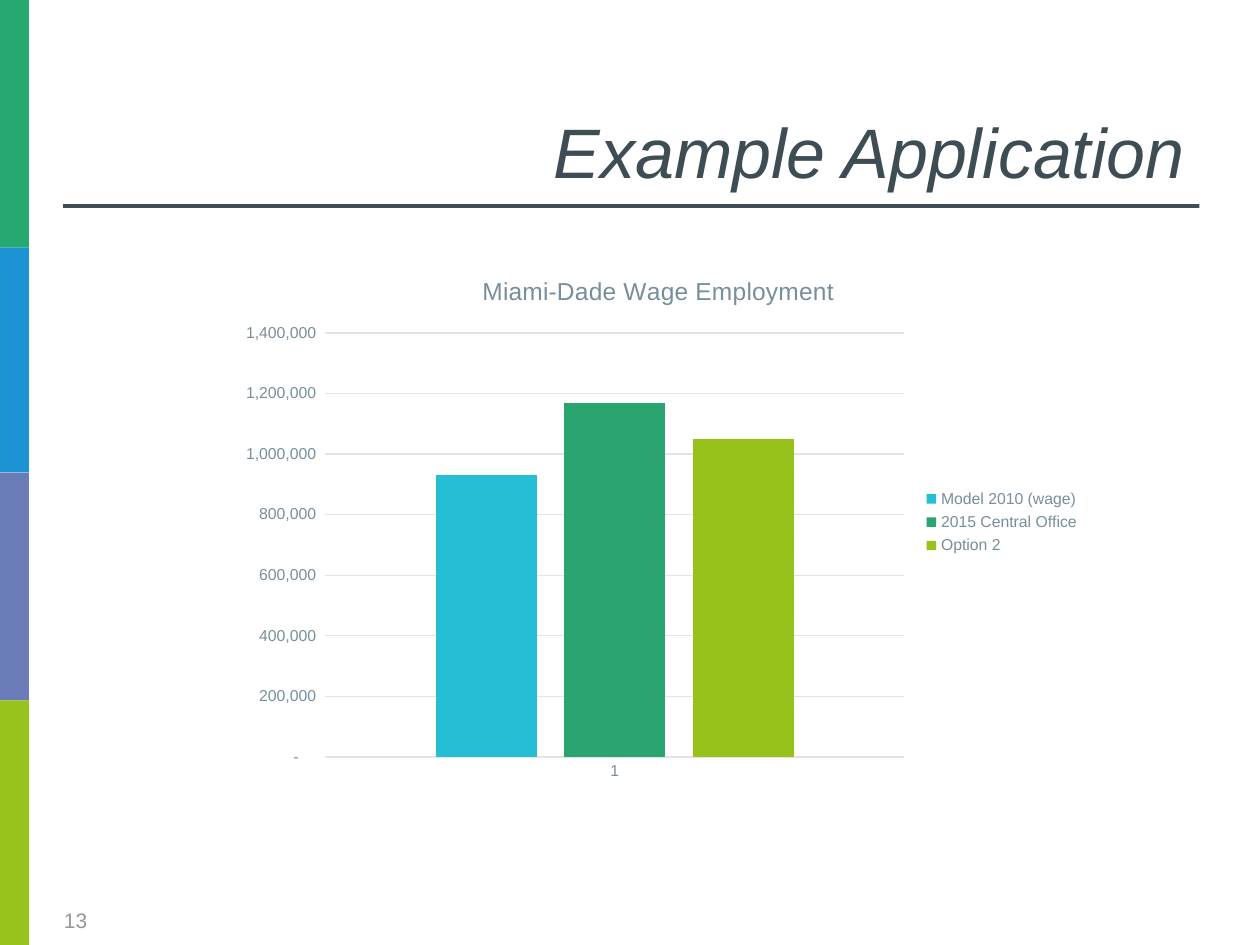
from dataclasses import dataclass
from itertools import pairwise
from typing import Any

from pptx import Presentation
from pptx.chart.data import CategoryChartData
from pptx.dml.color import RGBColor
from pptx.enum.chart import XL_CHART_TYPE as ChartType
from pptx.enum.chart import XL_LEGEND_POSITION as LegendPos
from pptx.enum.chart import XL_TICK_MARK as Tick
from pptx.enum.shapes import MSO_SHAPE as Shape
from pptx.enum.text import MSO_ANCHOR as Anchor
from pptx.enum.text import PP_ALIGN as Align
from pptx.util import Inches, Pt

WIDTH, HEIGHT = Inches(10), Inches(7.5)
FONT = "Arial"
MUTED, GRID = "788E9B", "E0E5E8"
NUMBER_FORMAT = '_(* #,##0_);_(* \\(#,##0\\);_(* "-"??_);_(@_)'


@dataclass(frozen=True)
class Box:
    """Percentages of the slide's width and height."""

    left: float
    top: float
    width: float
    height: float

    def emu(self) -> tuple[int, int, int, int]:
        return (
            round(WIDTH * self.left / 100),
            round(HEIGHT * self.top / 100),
            round(WIDTH * self.width / 100),
            round(HEIGHT * self.height / 100),
        )


@dataclass(frozen=True)
class Label:
    box: Box
    text: str
    size: int
    color: str
    align: Align
    anchor: Anchor
    italic: bool = False


@dataclass(frozen=True)
class Series:
    name: str
    value: int
    color: str


STRIPE_EDGES = (0, 26.2, 50, 74.13, 100)
STRIPE_COLORS = ("26A871", "1C93D2", "6A7CB8", "97C31C")
RULE = Box(5, 21.6, 90.2, 0.4)
CHART = Box(17.8, 26.8, 68.9, 56.93)
LABELS = (
    Label(Box(5, -0.13, 90, 21.2), "Example Application", 40, "3E4D54",
          Align.RIGHT, Anchor.BOTTOM, True),
    Label(Box(4.1, 94.67, 7.3, 5.33), "13", 12, "939799",
          Align.LEFT, Anchor.MIDDLE),
)
SERIES = (
    Series("Model 2010 (wage)", 930000, "25BED5"),
    Series("2015 Central Office", 1170000, "2BA570"),
    Series("Option 2", 1050000, "97C21C"),
)


def rgb(color: str) -> RGBColor:
    return RGBColor.from_string(color)


def set_font(font: Any, size: int, color: str, italic: bool = False) -> None:
    font.name, font.size = FONT, Pt(size)
    font.bold, font.italic = False, italic
    font.color.rgb = rgb(color)


def set_line(line: Any) -> None:
    line.color.rgb = rgb(GRID)
    line.width = Pt(0.75)


def add_bar(s: Any, box: Box, color: str) -> None:
    sp = s.shapes.add_shape(Shape.RECTANGLE, *box.emu())
    sp.shadow.inherit = False
    sp.fill.solid()
    sp.fill.fore_color.rgb = rgb(color)
    sp.line.fill.background()


def add_label(s: Any, label: Label) -> None:
    tf = s.shapes.add_textbox(*label.box.emu()).text_frame
    tf.word_wrap = True
    tf.vertical_anchor = label.anchor
    p = tf.paragraphs[0]
    p.alignment = label.align
    r = p.add_run()
    r.text = label.text
    set_font(r.font, label.size, label.color, label.italic)


def style_axis(axis: Any) -> None:
    axis.major_tick_mark = axis.minor_tick_mark = Tick.NONE
    set_font(axis.tick_labels.font, 9, MUTED)


def add_employment_chart(s: Any) -> None:
    data = CategoryChartData(number_format=NUMBER_FORMAT)
    data.categories = ["1"]
    for series in SERIES:
        data.add_series(series.name, [series.value])
    chart = s.shapes.add_chart(
        ChartType.COLUMN_CLUSTERED, *CHART.emu(), data).chart
    set_font(chart.font, 10, "3F4D55")

    chart.has_title = True
    r = chart.chart_title.text_frame.paragraphs[0].add_run()
    r.text = "Miami-Dade Wage Employment"
    set_font(r.font, 14, MUTED)
    chart.chart_title.include_in_layout = False

    chart.has_legend = True
    chart.legend.position = LegendPos.RIGHT
    chart.legend.include_in_layout = False
    set_font(chart.legend.font, 9, MUTED)

    for axis in (chart.category_axis, chart.value_axis):
        style_axis(axis)
    set_line(chart.category_axis.format.line)
    values = chart.value_axis
    values.minimum_scale, values.maximum_scale = 0, 1400000
    values.major_unit = 200000
    values.format.line.fill.background()
    values.tick_labels.number_format = NUMBER_FORMAT
    values.tick_labels.number_format_is_linked = False
    set_line(values.major_gridlines.format.line)

    plot = chart.plots[0]
    plot.vary_by_categories = False
    plot.gap_width, plot.overlap = 219, -27
    for column, series in zip(plot.series, SERIES):
        column.format.fill.solid()
        column.format.fill.fore_color.rgb = rgb(series.color)


def main() -> None:
    prs = Presentation()
    prs.slide_width, prs.slide_height = WIDTH, HEIGHT
    s = prs.slides.add_slide(prs.slide_layouts[6])
    for (top, bottom), color in zip(pairwise(STRIPE_EDGES), STRIPE_COLORS):
        add_bar(s, Box(0, top, 2.3, bottom - top), color)
    add_bar(s, RULE, "3F4D55")
    for label in LABELS:
        add_label(s, label)
    add_employment_chart(s)
    prs.save("out.pptx")


if __name__ == "__main__":
    main()
